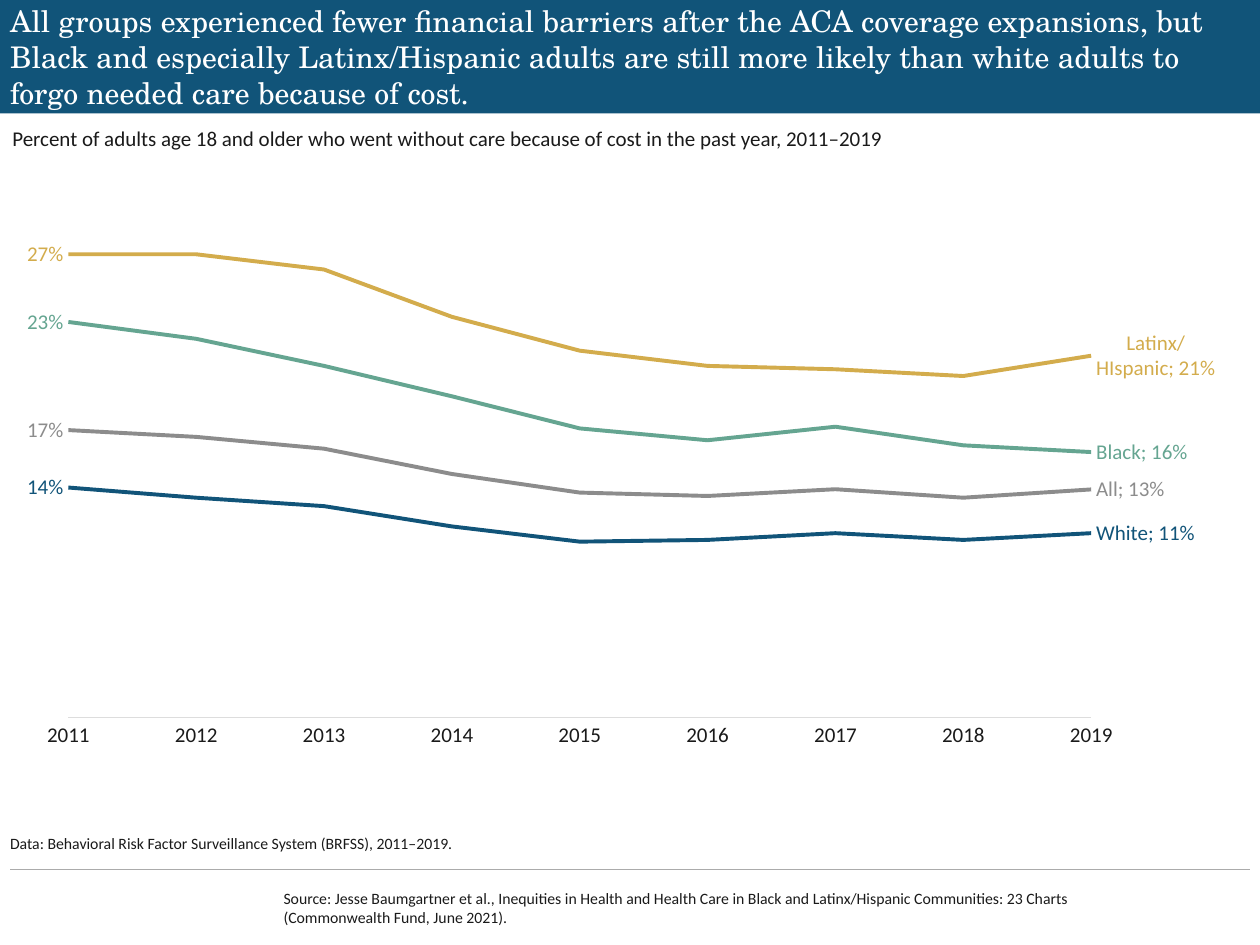
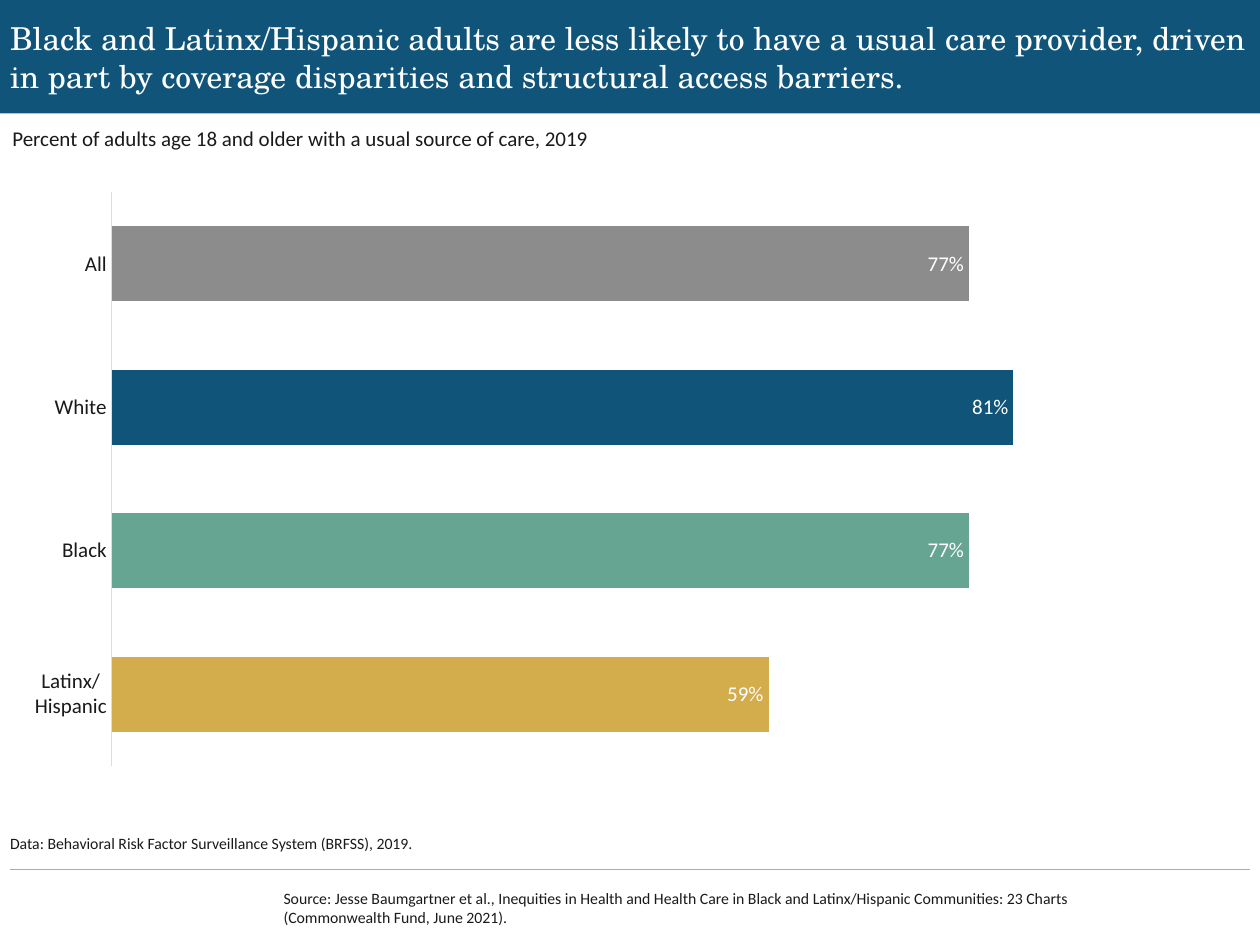
import pptx
import pptx.util
import pptx.dml.color
import pptx.chart.data
import pptx.enum.chart
import pptx.enum.shapes
import pptx.enum.text
import pptx.oxml
import pptx.oxml.ns

Inches, Pt = pptx.util.Inches, pptx.util.Pt
Kind = pptx.enum.chart.XL_CHART_TYPE
Place = pptx.enum.chart.XL_LABEL_POSITION
Anchor = pptx.enum.text.MSO_ANCHOR
qn = pptx.oxml.ns.qn

INK, PAPER, RULE, AXIS = "1A1A1A", "FFFFFF", "ABABAB", "DDDDDD"
NAVY, GREEN, GOLD, GREY = "115479", "65A591", "D3AC4C", "8C8C8C"
SANS, SERIF = "Calibri", "TeX Gyre Schola"
WIDE, HIGH, EDGE, BAND = 10, 7.5, 0.08, 0.9
INNER = WIDE - 2 * EDGE
SOURCE = (
    "Source: Jesse Baumgartner et al., Inequities in Health and Health Care in Black "
    "and Latinx/Hispanic Communities: 23 Charts (Commonwealth Fund, June 2021)."
)

YEARS = range(2011, 2020)
TRENDS = [
    ("All", GREY, [17.0, 16.6, 15.9, 14.4, 13.3, 13.1, 13.5, 13.0, 13.49]),
    ("White", NAVY, [13.6, 13.0, 12.5, 11.3, 10.4, 10.5, 10.9, 10.5, 10.9]),
    ("Black", GREEN, [23.4, 22.4, 20.8, 19.0, 17.1, 16.4, 17.2, 16.1, 15.7]),
    ("Latinx/\nHIspanic", GOLD, [27.4, 27.4, 26.5, 23.7, 21.7, 20.8, 20.6, 20.2, 21.4]),
]
SHARES = [
    ("Latinx/\nHispanic", GOLD, 59),
    ("Black", GREEN, 77),
    ("White", NAVY, 81),
    ("All", GREY, 77),
]


def color(code):
    return pptx.dml.color.RGBColor.from_string(code)


def paint(fill, code):
    fill.solid()
    fill.fore_color.rgb = color(code)


def style(font, size=12, face=SANS, code=INK):
    font.size, font.name = Pt(size), face
    font.color.rgb = color(code)


def stroke(line, code, width=0.75):
    line.color.rgb = color(code)
    line.width = Pt(width)


def write(slide, box, words, anchor=Anchor.TOP, inset=(0, 0), lead=None, **look):
    """Add a text box; inset is the horizontal and vertical margin in inches."""
    frame = slide.shapes.add_textbox(*map(Inches, box)).text_frame
    frame.word_wrap = True
    frame.vertical_anchor = anchor
    frame.margin_left = frame.margin_right = Inches(inset[0])
    frame.margin_top = frame.margin_bottom = Inches(inset[1])
    para = frame.paragraphs[0]
    para.text = words
    if lead:
        para.line_spacing = lead
    style(para.font, **look)


def head(slide, box, title, size):
    band = slide.shapes.add_shape(
        pptx.enum.shapes.MSO_SHAPE.RECTANGLE, *map(Inches, box))
    band.shadow.inherit = False
    paint(band.fill, NAVY)
    band.line.fill.background()
    left, top, width, height = box
    write(slide, (left + EDGE, top, width - 2 * EDGE, height), title,
          anchor=Anchor.MIDDLE, size=size, face=SERIF, code=PAPER)


def foot(slide, box, data):
    """Place the data note, the rule and the source line."""
    left, top, width, _ = box
    write(slide, (left, top, width, 0.54), data, anchor=Anchor.BOTTOM, lead=0.9, size=9)
    level = Inches(top + 0.67)
    rule = slide.shapes.add_connector(
        pptx.enum.shapes.MSO_CONNECTOR.STRAIGHT,
        Inches(left), level, Inches(left + width), level)
    stroke(rule.line, RULE)
    rule._element.spPr.append(pptx.oxml.parse_xml(
        f"<a:effectLst {pptx.oxml.ns.nsdecls('a')}/>"))
    write(slide, (left + 2.17, top + 0.82, 7.05, 0.3), SOURCE,
          anchor=Anchor.MIDDLE, size=9)


def page(deck, title, size, topic, data):
    slide = deck.slides.add_slide(deck.slide_layouts[6])
    paint(slide.background.fill, PAPER)
    head(slide, (0, 0, WIDE, BAND), title, size)
    write(slide, (0, BAND + 0.05, 8.84, 0.3), topic, inset=(0.1, 0.05))
    foot(slide, (EDGE, 6.23, INNER, 1.12), data)
    return slide


def graph(slide, box, kind, data, area, top):
    """Add a chart whose plot fills area and whose hidden axis ends at top."""
    chart = slide.shapes.add_chart(kind, *map(Inches, box), data).chart
    chart.has_legend = chart.has_title = False
    style(chart.font)
    plot = chart._chartSpace.chart.plotArea
    for old in plot.findall(qn("c:layout")):
        plot.remove(old)
    sides = "".join(f'<c:{n} val="{v}"/>' for n, v in zip("xywh", area))
    plot.insert(0, pptx.oxml.parse_xml(
        f"<c:layout {pptx.oxml.ns.nsdecls('c')}><c:manualLayout>"
        '<c:layoutTarget val="inner"/><c:xMode val="edge"/><c:yMode val="edge"/>'
        f"{sides}</c:manualLayout></c:layout>"))
    base, scale = chart.category_axis, chart.value_axis
    none = pptx.enum.chart.XL_TICK_MARK.NONE
    base.major_tick_mark = base.minor_tick_mark = none
    base.has_major_gridlines = scale.has_major_gridlines = False
    stroke(base.format.line, AXIS)
    style(base.tick_labels.font)
    scale.visible = False
    scale.minimum_scale, scale.maximum_scale = 0, top
    return chart


def tag(series, spot, place, code, named=False):
    """Label one point with its value, and its series name if named."""
    label = series.points[spot].data_label
    style(label.font, code=code)
    label.position = place
    node = label._get_or_add_dLbl()
    space = pptx.oxml.ns.nsdecls("c")
    node.find(qn("c:idx")).addnext(pptx.oxml.parse_xml(
        f"<c:numFmt {space} formatCode='0\"%\"' sourceLinked='0'/>"))
    node.find(qn("c:showSerName")).set("val", str(int(named)))
    node.find(qn("c:showBubbleSize")).addnext(pptx.oxml.parse_xml(
        f"<c:separator {space}>; </c:separator>"))


def trend(slide, box):
    data = pptx.chart.data.XyChartData()
    for name, _, rates in TRENDS:
        series = data.add_series(name)
        for year, rate in zip(YEARS, rates):
            series.add_data_point(year, rate)
    chart = graph(slide, box, Kind.XY_SCATTER_LINES_NO_MARKERS, data,
                  (0.047, 0.098, 0.825, 0.805), 30)
    base = chart.category_axis
    base.minimum_scale, base.maximum_scale = YEARS[0], YEARS[-1]
    base.major_unit = 1
    base.tick_labels.number_format = "0"
    base.tick_labels.number_format_is_linked = False
    chart.plots[0].vary_by_categories = False
    for series, (_, code, rates) in zip(chart.plots[0].series, TRENDS):
        series.smooth = False
        stroke(series.format.line, code, 2.25)
        tag(series, 0, Place.LEFT, code)
        tag(series, len(rates) - 1, Place.RIGHT, code, named=True)
        for flag in series._element.xpath("./c:dLbls/c:showVal"):
            flag.set("val", "0")


def bars(slide, box):
    names, codes, rates = zip(*SHARES)
    data = pptx.chart.data.CategoryChartData()
    data.categories = names
    data.add_series("Series 1", rates)
    chart = graph(slide, box, Kind.BAR_CLUSTERED, data,
                  (0.082, 0.02, 0.898, 0.959), 100)
    plot = chart.plots[0]
    plot.vary_by_categories = False
    plot.gap_width = 92
    series = plot.series[0]
    paint(series.format.fill, NAVY)
    for spot, code in enumerate(codes):
        paint(series.points[spot].format.fill, code)
    labels = series.data_labels
    labels.show_value = True
    labels.position = Place.INSIDE_END
    labels.number_format = '#"%"'
    labels.number_format_is_linked = False
    style(labels.font, code=PAPER)


def main():
    deck = pptx.Presentation()
    deck.slide_width, deck.slide_height = Inches(WIDE), Inches(HIGH)
    trend(page(
        deck,
        "All groups experienced fewer financial barriers after the ACA coverage "
        "expansions, but Black and especially Latinx/Hispanic adults are still more "
        "likely than white adults to forgo needed care because of cost.",
        17,
        "Percent of adults age 18 and older who went without care because of cost "
        "in the past year, 2011–2019",
        "Data: Behavioral Risk Factor Surveillance System (BRFSS), 2011–2019.",
    ), (EDGE, 1.18, INNER, 5))
    bars(page(
        deck,
        "Black and Latinx/Hispanic adults are less likely to have a usual care "
        "provider, driven in part by coverage disparities and structural access "
        "barriers.",
        18,
        "Percent of adults age 18 and older with a usual source of care, 2019",
        "Data: Behavioral Risk Factor Surveillance System (BRFSS), 2019.",
    ), (EDGE, 1.43, INNER, 4.75))
    deck.save("out.pptx")


if __name__ == "__main__":
    main()
